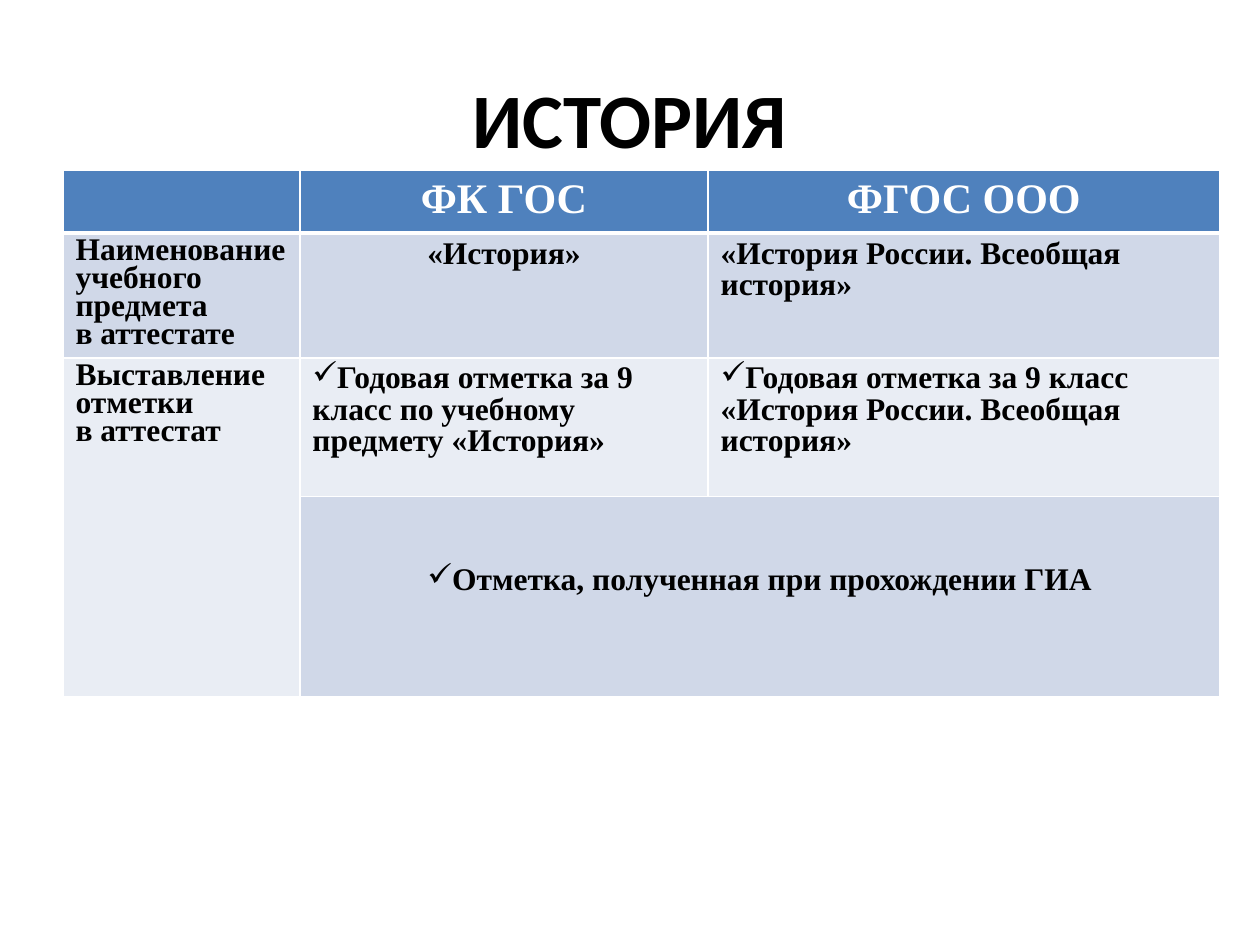
import lxml.etree
import pptx
import pptx.dml.color
import pptx.enum.text
import pptx.oxml.ns
import pptx.util

Color = pptx.dml.color.RGBColor
WHITE = Color(0xFF, 0xFF, 0xFF)
BLACK = Color(0, 0, 0)
HEADER_BLUE = Color(0x4F, 0x81, 0xBD)
BAND_DARK = Color(0xD0, 0xD8, 0xE8)
BAND_LIGHT = Color(0xE9, 0xED, 0xF4)
LEFT = pptx.enum.text.PP_ALIGN.LEFT
CENTER = pptx.enum.text.PP_ALIGN.CENTER
MIDDLE = pptx.enum.text.MSO_ANCHOR.MIDDLE
TITLE_FONT = "Calibri"
TABLE_FONT = "Times New Roman"

COLUMNS = (1.88, 3.24, 4.06)
ROWS = (0.46, 0.99, 1.1, 1.59)
FILLS = (HEADER_BLUE, BAND_DARK, BAND_LIGHT, BAND_DARK)


class SlideBuilder:
    def __init__(self, deck):
        self.width, self.height = deck.slide_width, deck.slide_height
        self.page = deck.slides.add_slide(deck.slide_layouts[6])

    def frame(self, left, top, width, height):
        return (int(left * self.width), int(top * self.height),
                int(width * self.width), int(height * self.height))

    def style_text(self, para, text, font, size, color, align):
        para.text = text
        para.alignment = align
        for span in para.runs:
            span.font.name = font
            span.font.size = pptx.util.Pt(size)
            span.font.bold = True
            span.font.color.rgb = color

    def title(self, text, *place):
        box = self.page.shapes.add_textbox(*self.frame(*place))
        box.text_frame.word_wrap = True
        box.text_frame.vertical_anchor = MIDDLE
        self.style_text(box.text_frame.paragraphs[0], text, TITLE_FONT, 44, BLACK, CENTER)

    def table(self, left, top, columns, rows, fills):
        place = self.frame(left, top, sum(columns) / 10, sum(rows) / 7.5)
        table = self.page.shapes.add_table(len(rows), len(columns), *place).table
        for column, width in zip(table.columns, columns):
            column.width = pptx.util.Inches(width)
        for index, (row, height, color) in enumerate(zip(table.rows, rows, fills)):
            row.height = pptx.util.Inches(height)
            for cell in row.cells:
                cell.fill.solid()
                cell.fill.fore_color.rgb = color
                self.borders(cell, top=3 if index == 1 else 1, bottom=3 if index == 0 else 1)
        return table

    def borders(self, cell, top, bottom):
        properties = cell._tc.get_or_add_tcPr()
        sides = (("lnL", 1), ("lnR", 1), ("lnT", top), ("lnB", bottom))
        for position, (side, points) in enumerate(sides):
            line = lxml.etree.Element(pptx.oxml.ns.qn("a:" + side), w=str(pptx.util.Pt(points)))
            fill = lxml.etree.SubElement(line, pptx.oxml.ns.qn("a:solidFill"))
            lxml.etree.SubElement(fill, pptx.oxml.ns.qn("a:srgbClr"), val=str(WHITE))
            properties.insert(position, line)

    def cell(self, cell, text, size=18, color=BLACK, align=LEFT, spacing=None, check=False):
        para = cell.text_frame.paragraphs[0]
        self.style_text(para, text, TABLE_FONT, size, color, align)
        if spacing:
            para.line_spacing = pptx.util.Pt(spacing)
        if check:
            properties = para._p.get_or_add_pPr()
            properties.set("marL", "0")
            properties.set("indent", "0")
            lxml.etree.SubElement(properties, pptx.oxml.ns.qn("a:buChar"), char="✓")


def main():
    deck = pptx.Presentation()
    deck.slide_width = pptx.util.Inches(10)
    deck.slide_height = pptx.util.Inches(7.5)
    slide = SlideBuilder(deck)
    slide.title("ИСТОРИЯ", 0.05, 0.04, 0.9, 0.17)

    table = slide.table(0.05, 0.18, COLUMNS, ROWS, FILLS)
    table.cell(2, 0).merge(table.cell(3, 0))
    table.cell(3, 1).merge(table.cell(3, 2))

    for column, text in enumerate(("ФК ГОС", "ФГОС ООО"), 1):
        slide.cell(table.cell(0, column), text, size=24, color=WHITE, align=CENTER)

    labels = ("Наименование учебного предмета \nв аттестате",
              "Выставление отметки \nв аттестат")
    for row, text in enumerate(labels, 1):
        slide.cell(table.cell(row, 0), text, spacing=16)

    slide.cell(table.cell(1, 1), "«История»", align=CENTER, spacing=18)
    slide.cell(table.cell(1, 2), "«История России. Всеобщая история»", spacing=18)

    marks = ("Годовая отметка за 9 класс по учебному предмету «История»",
             "Годовая отметка за 9 класс \n«История России. Всеобщая история»")
    for column, text in enumerate(marks, 1):
        slide.cell(table.cell(2, column), text, spacing=18, check=True)

    exam = table.cell(3, 1)
    exam.margin_top = pptx.util.Inches(0.55)
    slide.cell(exam, "Отметка, полученная при прохождении ГИА",
               align=CENTER, spacing=18, check=True)

    deck.save("out.pptx")


if __name__ == "__main__":
    main()
